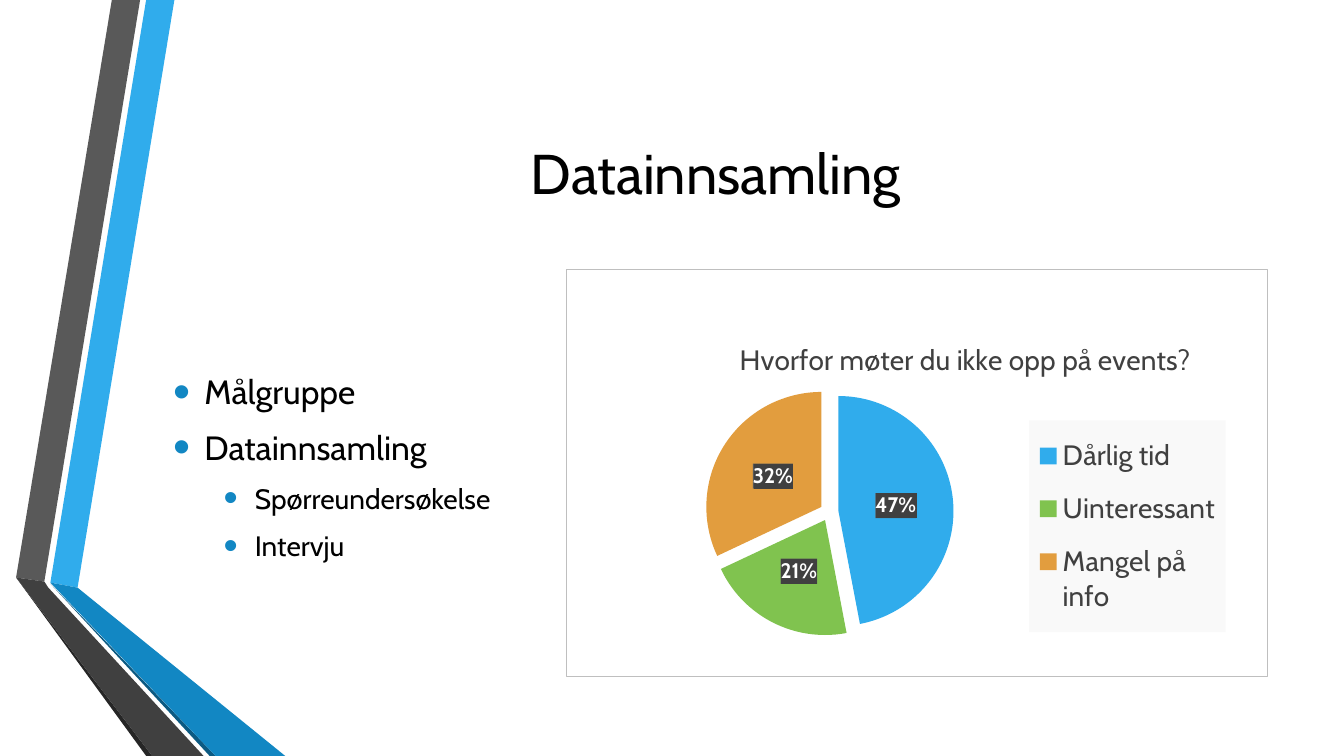
from pptx import Presentation
from pptx.chart.data import CategoryChartData
from pptx.dml.color import RGBColor
from pptx.enum.chart import XL_CHART_TYPE, XL_LABEL_POSITION, XL_LEGEND_POSITION
from pptx.enum.text import MSO_ANCHOR, PP_ALIGN
from pptx.oxml import parse_xml
from pptx.oxml.ns import nsdecls, qn
from pptx.util import Inches, Pt

PIE = XL_CHART_TYPE.PIE
LABEL_CENTER = XL_LABEL_POSITION.CENTER
LEGEND_RIGHT = XL_LEGEND_POSITION.RIGHT
MIDDLE = MSO_ANCHOR.MIDDLE
CENTER = PP_ALIGN.CENTER
FONT = "Cabin"


def style_font(font, size, color, bold=False):
    font.name, font.size, font.bold = FONT, Pt(size), bold
    font.color.rgb = RGBColor.from_string(color)


def set_layout(part, index, **fractions):
    """Place a chart part by fractions of the chart area."""
    old = part.find(qn("c:layout"))
    if old is not None:
        part.remove(old)
    target = '<c:layoutTarget val="inner"/>' if "w" in fractions and index == 0 else ""
    modes = '<c:xMode val="edge"/><c:yMode val="edge"/>'
    values = "".join(f'<c:{key} val="{value}"/>' for key, value in fractions.items())
    part.insert(index, parse_xml(
        f'<c:layout {nsdecls("c")}><c:manualLayout>{target}{modes}{values}'
        '</c:manualLayout></c:layout>'))


prs = Presentation()
prs.slide_width, prs.slide_height = Inches(13.33), Inches(7.5)
slide = prs.slides.add_slide(prs.slide_layouts[6])

# Folded ribbons on the left edge
ribbons = [
    ("30ACEC", [(0.5, 5.78), (0.77, 5.83), (1.73, 0), (1.45, 0)]),
    ("595959", [(1.39, 0), (1.11, 0), (0.16, 5.73), (0.44, 5.77)]),
    ("262626", [(0.16, 5.73), (1.45, 7.5), (1.51, 7.5)]),
    ("0C5A82", [(0.5, 5.79), (2.08, 7.5), (2.14, 7.5)]),
    ("1287C3", [(0.5, 5.78), (2.14, 7.5), (2.83, 7.5), (0.77, 5.83)]),
    ("404040", [(2.02, 7.5), (0.48, 5.83), (0.44, 5.77), (0.16, 5.73), (1.51, 7.5)]),
]
for color, corners in ribbons:
    points = [(Inches(x), Inches(y)) for x, y in corners]
    builder = slide.shapes.build_freeform(*points[0])
    builder.add_line_segments(points[1:], close=True)
    ribbon = builder.convert_to_shape()
    ribbon.shadow.inherit = False
    ribbon.fill.solid()
    ribbon.fill.fore_color.rgb = RGBColor.from_string(color)
    ribbon.line.fill.background()

# Heading
heading = slide.shapes.add_textbox(
    Inches(1.62), Inches(0.75), Inches(10.96), Inches(1.92)).text_frame
heading.word_wrap = True
heading.vertical_anchor = MIDDLE
heading.text = "Datainnsamling"
heading.paragraphs[0].alignment = CENTER
style_font(heading.paragraphs[0].font, 40, "000000")

# Topics
topics = slide.shapes.add_textbox(
    Inches(1.62), Inches(2.92), Inches(10.96), Inches(3.42)).text_frame
topics.word_wrap = True
topics.vertical_anchor = MIDDLE
topic_levels = [("Målgruppe", 0), ("Datainnsamling", 0),
                ("Spørreundersøkelse", 1), ("Intervju", 1)]
topics.text = "\n".join(text for text, level in topic_levels)
for topic, (text, level) in zip(topics.paragraphs, topic_levels):
    size = 24 - 4 * level
    topic.level = level
    topic.space_before, topic.space_after = Pt(size * 0.2), Pt(6)
    props = topic._p.get_or_add_pPr()
    props.set("marL", str(Inches(0.31 + 0.5 * level)))
    props.set("indent", str(Inches(-0.31)))
    for bullet in ('<a:buClr {}><a:srgbClr val="1287C3"/></a:buClr>',
                   '<a:buSzPct {} val="145000"/>',
                   '<a:buFont {} typeface="Arial"/>',
                   '<a:buChar {} char="•"/>'):
        props.append(parse_xml(bullet.format(nsdecls("a"))))
    style_font(topic.font, size, "000000")

# Survey chart
answers = CategoryChartData()
answers.categories = ["Dårlig tid", "Uinteressant", "Mangel på info"]
answers.add_series("Series 1", [47, 21, 32])
chart = slide.shapes.add_chart(
    PIE, Inches(5.61), Inches(2.67), Inches(6.97), Inches(4.05), answers).chart
style_font(chart.font, 10, "000000")

chart.has_title = True
question = chart.chart_title.text_frame
question.text = "Hvorfor møter du ikke opp på events?"
style_font(question.paragraphs[0].font, 20, "404040")
set_layout(chart.chart_title._element, 1, x=0.24, y=0.16)

chart.has_legend = True
legend = chart.legend
legend.position = LEGEND_RIGHT
legend.include_in_layout = False
style_font(legend.font, 20, "404040")
set_layout(legend._element, 1, x=0.66, y=0.37, w=0.28, h=0.52)

plot = chart.plots[0]
plot.vary_by_categories = True
set_layout(chart._chartSpace.chart.plotArea, 0, x=0, y=0.29, w=0.75, h=0.61)
series = plot.series[0]
for index, color in enumerate(["30ACEC", "80C34F", "E29D3E"]):
    slice_fill = series.points[index].format.fill
    slice_fill.solid()
    slice_fill.fore_color.rgb = RGBColor.from_string(color)
series._element.find(qn("c:tx")).addnext(
    parse_xml(f'<c:explosion {nsdecls("c")} val="8"/>'))

labels = series.data_labels
labels.show_percentage, labels.show_value = True, False
labels.number_format, labels.number_format_is_linked = "0%", False
labels.position = LABEL_CENTER
style_font(labels.font, 15, "FFFFFF", bold=True)

# Backgrounds and border, each placed before the part's text properties
backgrounds = [
    (chart._chartSpace, '<a:solidFill><a:srgbClr val="FFFFFF"/></a:solidFill>'
     '<a:ln w="9525"><a:solidFill><a:srgbClr val="BFBFBF"/></a:solidFill></a:ln>'),
    (legend._element, '<a:solidFill><a:srgbClr val="F9F9F9"/></a:solidFill>'),
    (labels._element, '<a:pattFill prst="dkVert"><a:fgClr><a:srgbClr val="404040"/></a:fgClr>'
     '<a:bgClr><a:srgbClr val="595959"/></a:bgClr></a:pattFill>'),
]
for part, look in backgrounds:
    part.find(qn("c:txPr")).addprevious(
        parse_xml(f'<c:spPr {nsdecls("c", "a")}>{look}</c:spPr>'))

prs.save("out.pptx")
